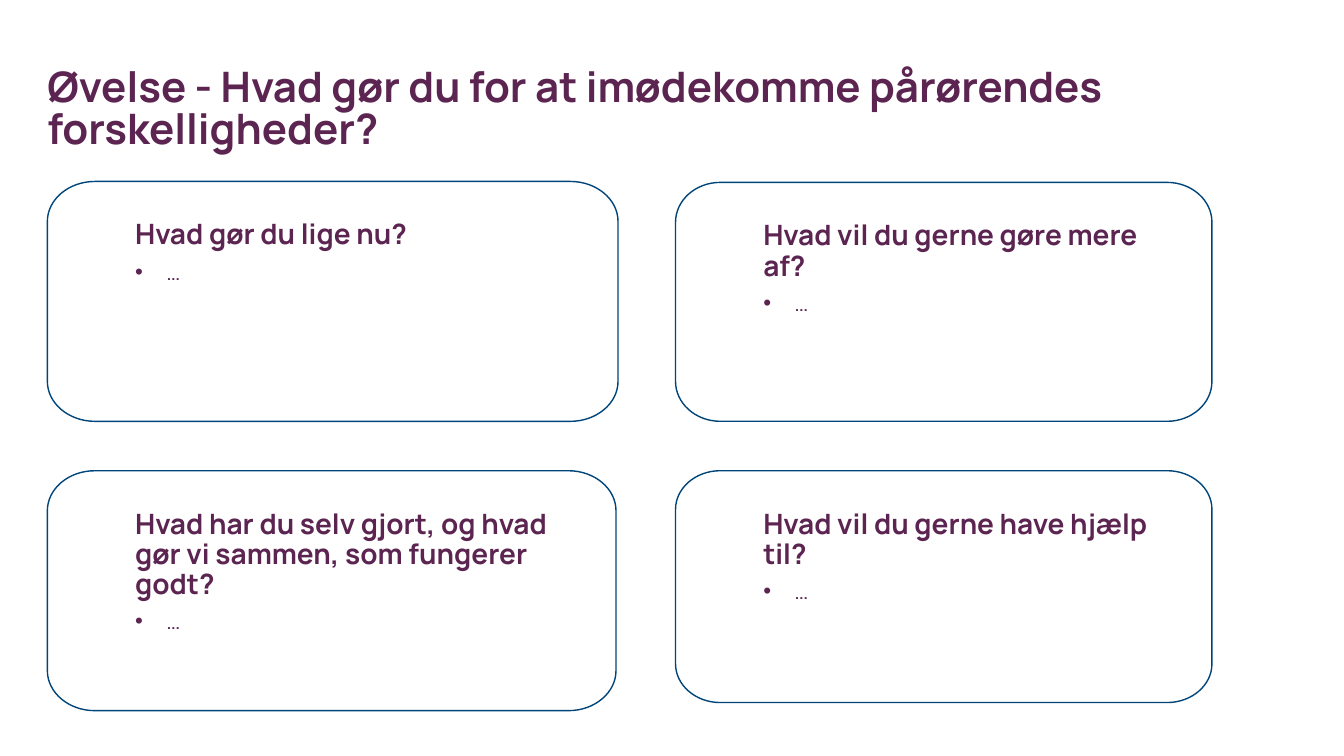
from dataclasses import dataclass

from lxml import etree
from pptx import Presentation
from pptx import util as u
from pptx.dml import color
from pptx.enum import shapes, text
from pptx.oxml import ns


@dataclass(frozen=True)
class Theme:
    font: str = "Manrope"
    plum: str = "5C2551"
    blue: str = "00457A"
    white: str = "FFFFFF"
    title_size: int = 30
    heading_size: int = 20
    body_size: int = 16


THEME = Theme()
PAGE_SIZE = (13.33, 7.5)
TITLE = "Øvelse - Hvad gør du for at imødekomme pårørendes forskelligheder?"
TITLE_BOX = (0.47, 0.69, 11.05, 0.86)
# Heading, box and fill of each card
CARDS = [
    ("Hvad gør du lige nu?", (0.47, 1.8, 5.66, 2.38), None),
    ("Hvad vil du gerne gøre mere af?", (6.7, 1.81, 5.32, 2.37), THEME.white),
    ("Hvad har du selv gjort, og hvad gør vi sammen, som fungerer godt?",
     (0.47, 4.67, 5.64, 2.38), THEME.white),
    ("Hvad vil du gerne have hjælp til?", (6.7, 4.67, 5.32, 2.3), THEME.white),
]
ARC = 0.55  # share of the way to the corner for a quarter-ellipse handle


def rgb(value):
    return color.RGBColor.from_string(value)


def paint(shape, fill):
    shape.shadow.inherit = False
    if fill is None:
        shape.fill.background()
    else:
        shape.fill.solid()
        shape.fill.fore_color.rgb = rgb(fill)


def prepare_frame(frame, left, top, right, bottom):
    frame.word_wrap = True
    frame.vertical_anchor = text.MSO_ANCHOR.TOP
    frame.margin_left, frame.margin_top = u.Inches(left), u.Inches(top)
    frame.margin_right, frame.margin_bottom = u.Inches(right), u.Inches(bottom)


def write(para, words, size, bold, spacing):
    para.alignment = text.PP_ALIGN.LEFT
    para.line_spacing = spacing
    span = para.add_run()
    span.text = words
    span.font.name = THEME.font
    span.font.size = u.Pt(size)
    span.font.bold = bold
    span.font.color.rgb = rgb(THEME.plum)


def add_property(para, tag, **attributes):
    """Append one element to the paragraph properties."""
    return etree.SubElement(para._p.get_or_add_pPr(), ns.qn(tag), attributes)


def space_after(para, percent):
    spacing = add_property(para, "a:spcAft")
    etree.SubElement(spacing, ns.qn("a:spcPct"), val=str(percent * 1000))


def add_bullet(para, indent):
    properties = para._p.get_or_add_pPr()
    properties.set("marL", str(u.Inches(indent)))
    properties.set("indent", str(-u.Inches(indent)))
    add_property(para, "a:buFont", typeface="Arial")
    add_property(para, "a:buChar", char="•")


def add_rounded_outline(page, box):
    """Draw a box whose corners are quarter ellipses, clockwise."""
    left, top, width, height = map(u.Inches, box)
    right, bottom = left + width, top + height
    radius_x, radius_y = width // 12, height // 6
    points = [
        (left, top + radius_y), (left + radius_x, top),
        (right - radius_x, top), (right, top + radius_y),
        (right, bottom - radius_y), (right - radius_x, bottom),
        (left + radius_x, bottom), (left, bottom - radius_y),
    ]
    corners = [(left, top), (right, top), (right, bottom), (left, bottom)]
    builder = page.shapes.build_freeform(*points[0])
    builder.add_line_segments(points[1:] + points[:1], close=True)
    outline = builder.convert_to_shape()

    # Every other segment cuts a corner: bend it into a curve
    segments = list(outline._element.spPr.iter(ns.qn("a:lnTo")))
    for index, corner in enumerate(corners):
        begin, end = points[2 * index:2 * index + 2]
        segment = segments[2 * index]
        segment.tag = ns.qn("a:cubicBezTo")
        for place, anchor in enumerate((begin, end)):
            x, y = (round(a + (c - a) * ARC) for a, c in zip(anchor, corner))
            handle = etree.Element(ns.qn("a:pt"), x=str(x - left), y=str(y - top))
            segment.insert(place, handle)
    return outline


def add_backdrop(page, box):
    backdrop = page.shapes.add_shape(
        shapes.MSO_SHAPE.RECTANGLE, *map(u.Inches, box))
    paint(backdrop, THEME.white)
    backdrop.line.fill.background()


def add_title(page, words, box):
    frame = page.shapes.add_textbox(*map(u.Inches, box)).text_frame
    prepare_frame(frame, 0, 0, 0, 0)
    write(frame.paragraphs[0], words, THEME.title_size, True, 0.83)


def add_card(page, heading, box, fill):
    # Outline
    card = add_rounded_outline(page, box)
    paint(card, fill)
    card.line.color.rgb = rgb(THEME.blue)
    card.line.width = u.Pt(1)

    # Heading and open bullet
    frame = card.text_frame
    prepare_frame(frame, 0.87, 0.39, 0.39, 0.39)
    question = frame.paragraphs[0]
    write(question, heading, THEME.heading_size, True, 0.9)
    space_after(question, 35)
    answer = frame.add_paragraph()
    write(answer, "…", THEME.body_size, False, 0.9)
    space_after(answer, 35)
    add_bullet(answer, 0.31)


def main():
    deck = Presentation()
    deck.slide_width, deck.slide_height = map(u.Inches, PAGE_SIZE)
    page = deck.slides.add_slide(deck.slide_layouts[6])
    add_backdrop(page, (0, 0, *PAGE_SIZE))
    add_title(page, TITLE, TITLE_BOX)
    for heading, box, fill in CARDS:
        add_card(page, heading, box, fill)
    deck.save("out.pptx")


if __name__ == "__main__":
    main()
